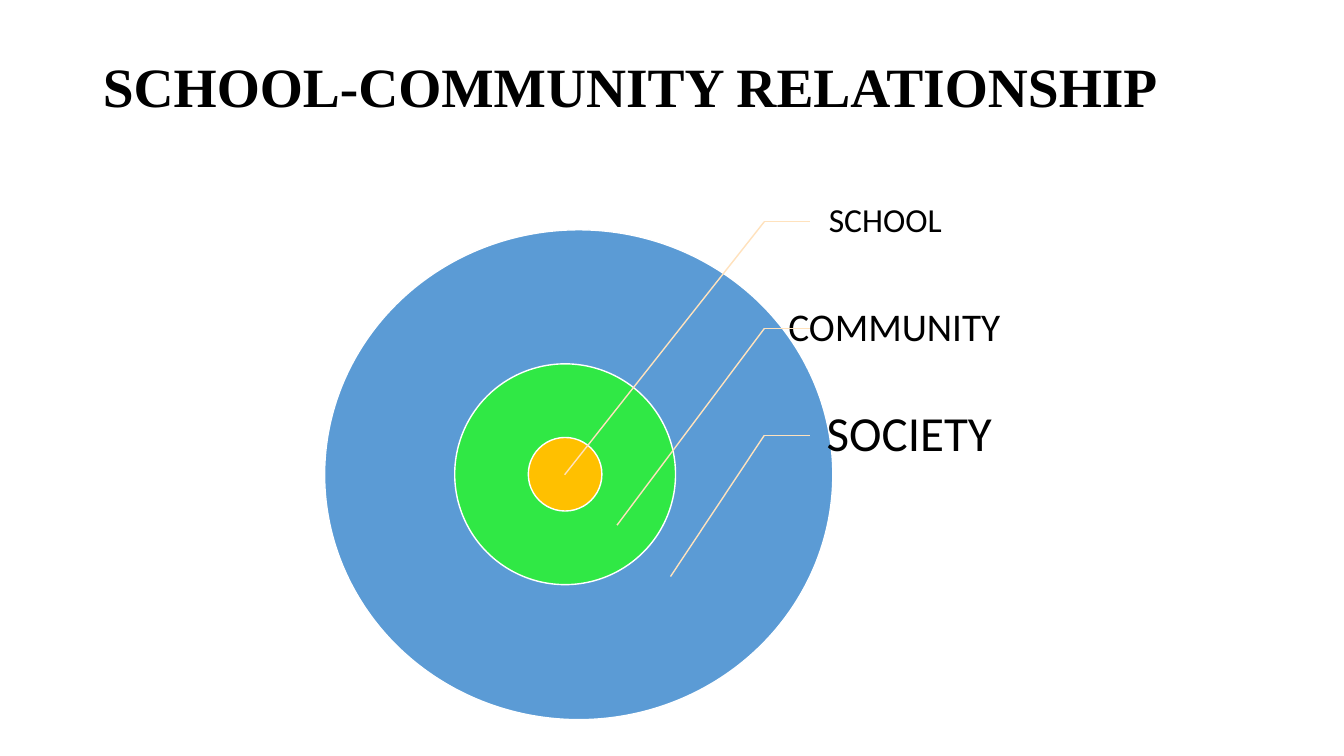
from dataclasses import dataclass

from pptx import Presentation
from pptx import util as u
from pptx.dml.color import RGBColor
from pptx.enum import shapes, text
from pptx.oxml.ns import qn


@dataclass(frozen=True)
class Theme:
    ink: str = "000000"
    edge: str = "FFFFFF"
    lead: str = "FFE2BD"
    serif: str = "Times New Roman"
    sans: str = "Calibri"
    head: float = 39.6
    line: float = 1


@dataclass(frozen=True)
class Ring:
    left: float
    top: float
    width: float
    height: float
    fill: str


@dataclass(frozen=True)
class Label:
    words: str
    left: float
    width: float
    size: float
    inset: float
    pad: float
    tip_x: float
    tip_y: float


THEME = Theme()
RINGS = [
    Ring(3.22, 2.28, 5.04, 4.86, "5B9BD5"),
    Ring(4.51, 3.61, 2.19, 2.19, "30E845"),
    Ring(5.24, 4.34, 0.73, 0.73, "FFC000"),
]
LABELS = [
    Label("SCHOOL", 8.03, 1.82, 24, 0.19, 0.03, 5.6, 4.71),
    Label("COMMUNITY", 7.6, 2.69, 28, 0.22, 0.04, 6.12, 5.21),
    Label("SOCIETY", 7.93, 2.03, 35, 0.27, 0.05, 6.65, 5.72),
]
TOP, STEP = 1.67, 1.06
BEND, STOP = 7.58, 8.03


def style(para, face: str, size: float, bold: bool = False) -> None:
    para.line_spacing = 0.9
    para.font.name = face
    para.font.size = u.Pt(size)
    para.font.bold = bold
    para.font.color.rgb = RGBColor.from_string(THEME.ink)


def add_title(slide, words: str) -> None:
    title = slide.shapes.title
    title.left, title.top = u.Inches(0.92), u.Inches(0.4)
    title.width, title.height = u.Inches(11.5), u.Inches(0.98)
    frame = title.text_frame
    frame.text = words
    frame.vertical_anchor = text.MSO_ANCHOR.MIDDLE
    para = frame.paragraphs[0]
    para.alignment = text.PP_ALIGN.LEFT
    style(para, THEME.serif, THEME.head, True)


def add_ring(slide, ring: Ring) -> None:
    box = map(u.Inches, (ring.left, ring.top, ring.width, ring.height))
    disc = slide.shapes.add_shape(shapes.MSO_SHAPE.OVAL, *box)
    disc.shadow.inherit = False
    disc.fill.solid()
    disc.fill.fore_color.rgb = RGBColor.from_string(ring.fill)
    disc.line.color.rgb = RGBColor.from_string(THEME.edge)
    disc.line.width = u.Pt(THEME.line)


def add_line(slide, x1: float, y1: float, x2: float, y2: float) -> None:
    ends = map(u.Inches, (x1, y1, x2, y2))
    line = slide.shapes.add_connector(shapes.MSO_CONNECTOR.STRAIGHT, *ends)
    line.line.color.rgb = RGBColor.from_string(THEME.lead)
    line.line.width = u.Pt(THEME.line)
    props = line._element.spPr
    props.append(props.makeelement(qn("a:effectLst"), {}))


def add_label(slide, label: Label, top: float) -> None:
    box = map(u.Inches, (label.left, top, label.width, STEP))
    frame = slide.shapes.add_textbox(*box).text_frame
    frame.word_wrap = True
    frame.vertical_anchor = text.MSO_ANCHOR.MIDDLE
    frame.margin_left = u.Inches(label.inset)
    frame.margin_top = frame.margin_right = frame.margin_bottom = u.Inches(label.pad)
    frame.text = label.words
    style(frame.paragraphs[0], THEME.sans, label.size)
    mid = top + STEP / 2
    add_line(slide, BEND, mid, STOP, mid)
    add_line(slide, BEND, mid, label.tip_x, label.tip_y)


def main() -> None:
    deck = Presentation()
    deck.slide_width, deck.slide_height = u.Inches(13.33), u.Inches(7.5)
    slide = deck.slides.add_slide(deck.slide_layouts.get_by_name("Title Only"))
    add_title(slide, "SCHOOL-COMMUNITY RELATIONSHIP")
    for ring in RINGS:
        add_ring(slide, ring)
    for row, label in enumerate(LABELS):
        add_label(slide, label, TOP + row * STEP)
    deck.save("out.pptx")


if __name__ == "__main__":
    main()
